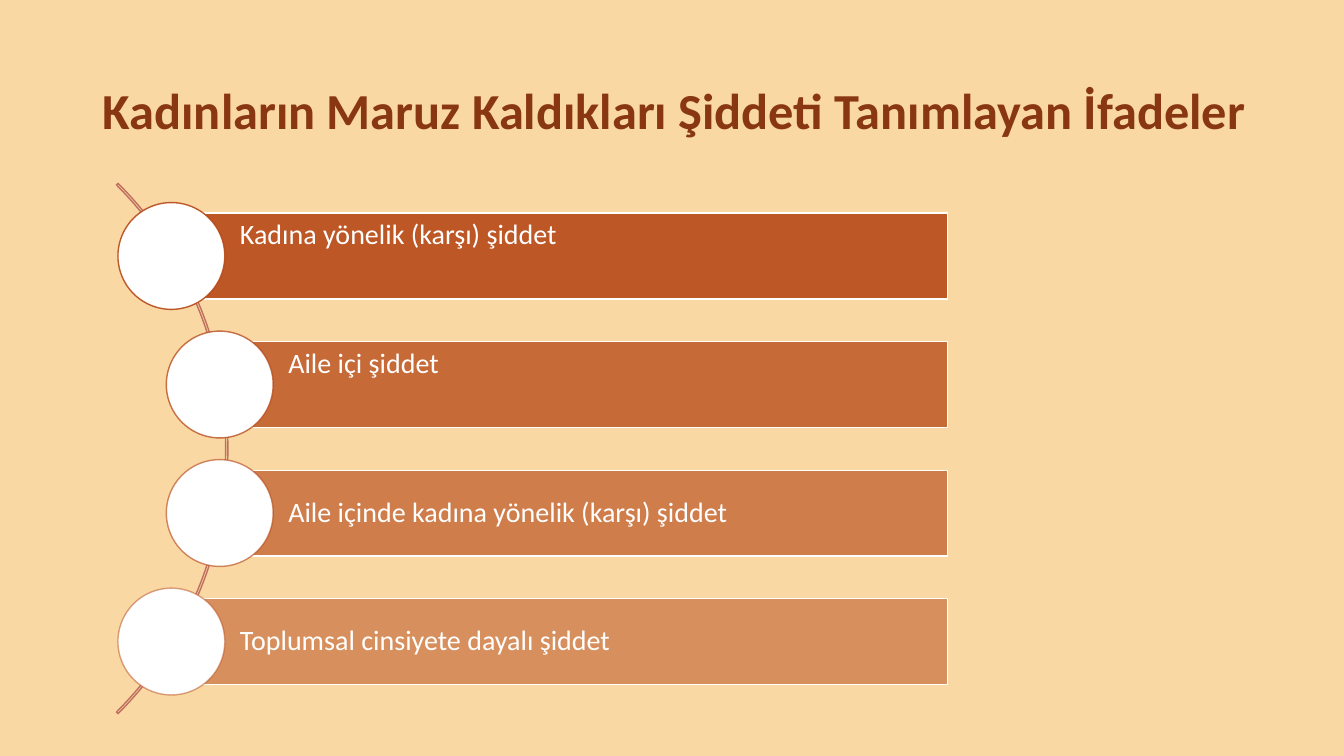
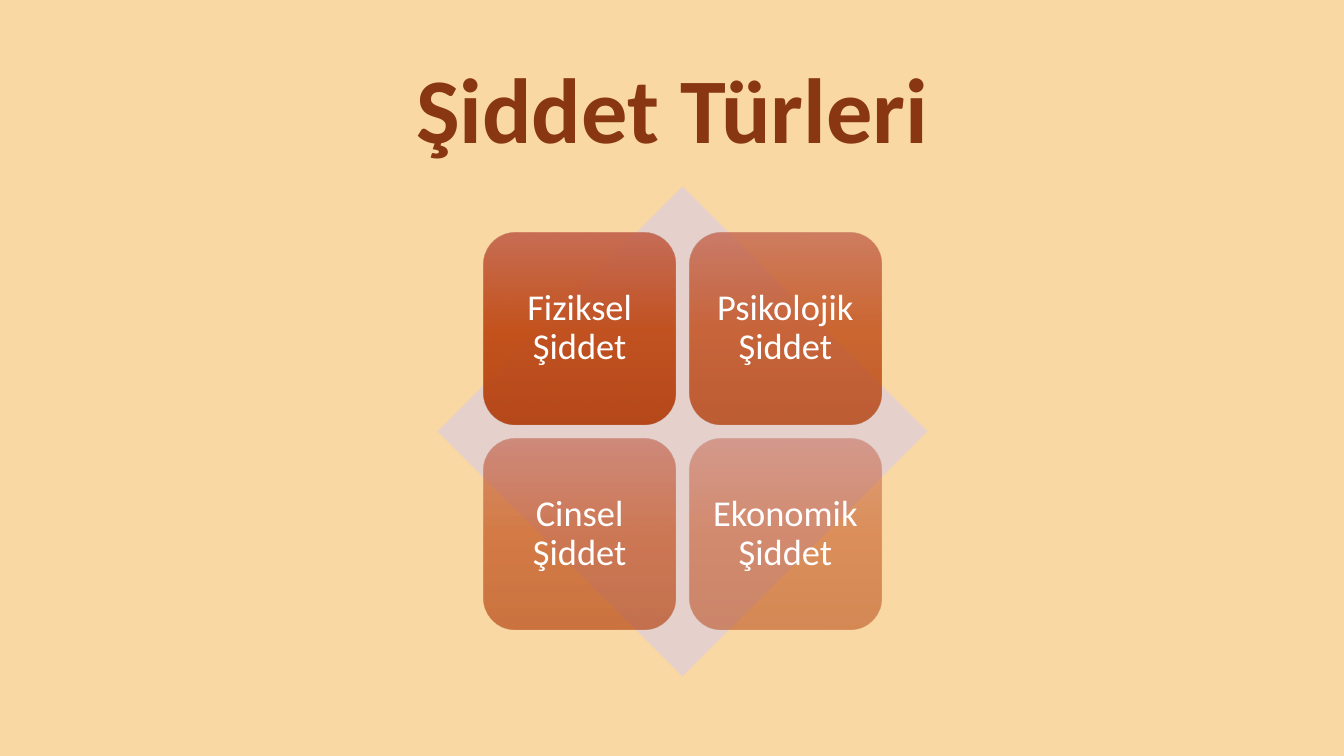
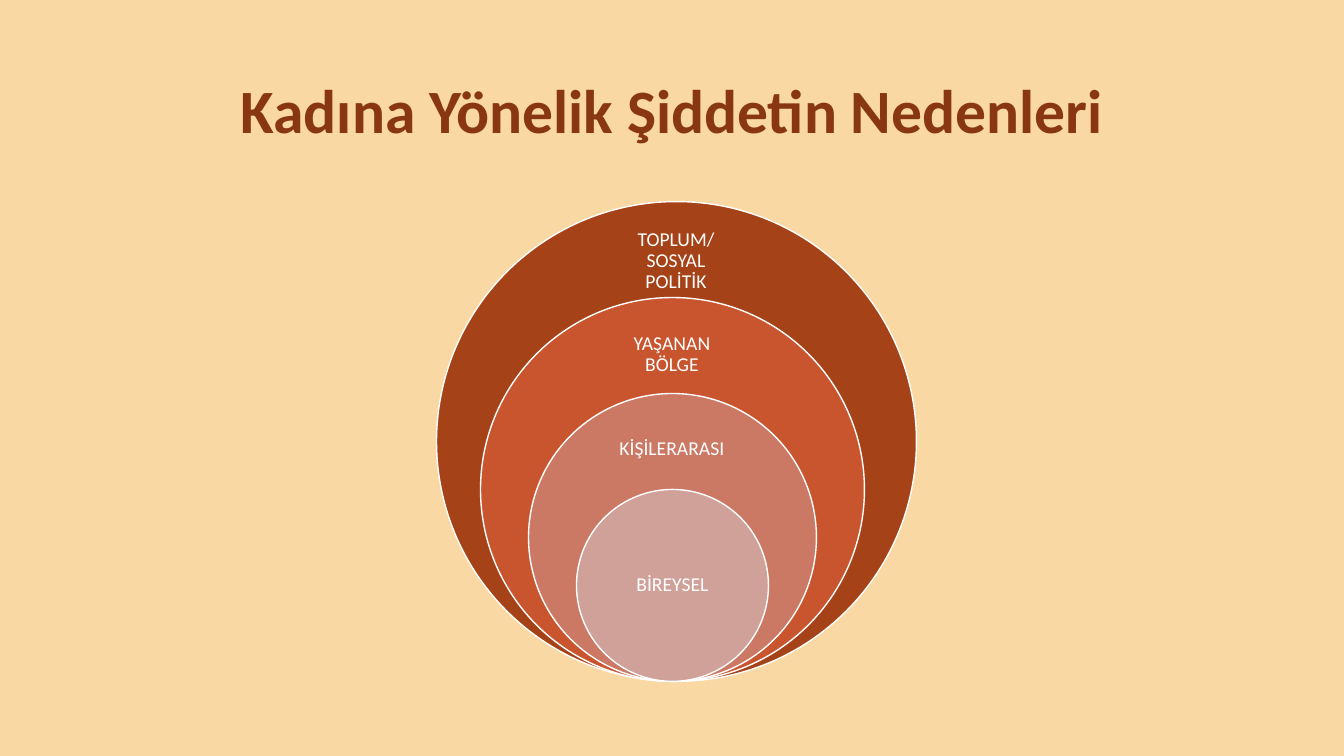
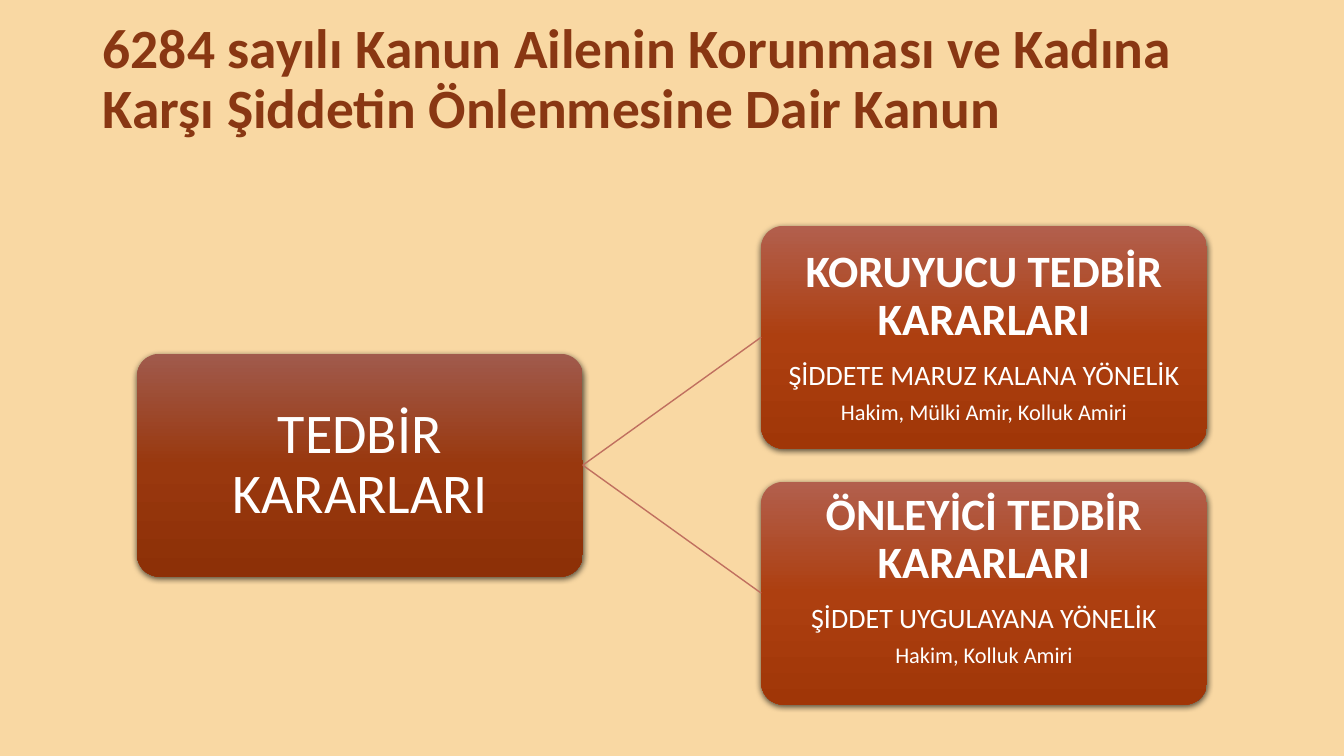
from lxml.etree import SubElement
from pptx import Presentation
from pptx.dml.color import RGBColor
from pptx.enum.shapes import MSO_CONNECTOR as Link, MSO_SHAPE as Kind
from pptx.enum.text import MSO_ANCHOR as Anchor, MSO_AUTO_SIZE as Auto, PP_ALIGN as Align
from pptx.oxml.ns import qn
from pptx.util import Inches, Pt

FONT = "Calibri"
SAND, RUST, WHITE = "F9D8A3", "893713", "FFFFFF"
BRICK, ROSE, MIST = "B74919", "C0705F", "E6D0CC"
TILE = ("C2634D", "BF4611", "B13B08")
ROOT = ("A05A4C", "99380E", "8D3007")
LEAF = ("B25F4D", "AD3F10", "A03607")
RINGS = ("A64217", "C8552D", "CB7964", "D0A198")
ALPHAS = (90, 77, 63, 50)


def rgb(code):
    return RGBColor.from_string(code)


def fade(node, alpha):
    if alpha < 100:
        SubElement(node, qn("a:alpha"), val=str(alpha * 1000))


def blend(shape, codes, alpha):
    shape.fill.gradient()
    shape.fill.gradient_angle = 270
    stops = shape.element.spPr.find(".//" + qn("a:gsLst"))
    for stop in list(stops):
        stops.remove(stop)
    for i, code in enumerate(codes):
        stop = SubElement(stops, qn("a:gs"), pos=str(i * 50000))
        fade(SubElement(stop, qn("a:srgbClr"), val=code), alpha)


def draw(slide, kind, box, fill=None, alpha=100, line=None, edge=100):
    shape = slide.shapes.add_shape(kind, *map(Inches, box))
    shape.shadow.inherit = False
    if fill is None:
        shape.fill.background()
    elif isinstance(fill, tuple):
        blend(shape, fill, alpha)
    else:
        shape.fill.solid()
        shape.fill.fore_color.rgb = rgb(fill)
        fade(shape.element.spPr.find(".//" + qn("a:srgbClr")), alpha)
    if line:
        shape.line.color.rgb = rgb(line)
        shape.line.width = Pt(1)
        fade(shape.element.spPr.find(qn("a:ln")).find(".//" + qn("a:srgbClr")), edge)
    else:
        shape.line.fill.background()
    return shape


def write(shape, *lines, size=20, color=WHITE, bold=False, align=Align.CENTER,
          inset=(0.1, 0.05, 0.1, 0.05), after=0.35):
    frame = shape.text_frame
    frame.word_wrap = True
    frame.auto_size = Auto.NONE
    frame.vertical_anchor = Anchor.MIDDLE
    (frame.margin_left, frame.margin_top,
     frame.margin_right, frame.margin_bottom) = map(Inches, inset)
    for i, line in enumerate(lines):
        words, pts, heavy = line if isinstance(line, tuple) else (line, size, bold)
        para = frame.add_paragraph() if i else frame.paragraphs[0]
        para.alignment = align
        para.line_spacing = 0.9
        para.space_before = Pt(0)
        para.space_after = Pt(round(pts * after, 1))
        run = para.add_run()
        run.text = words
        font = run.font
        font.name, font.size, font.bold = FONT, Pt(pts), heavy
        font.color.rgb = rgb(color)


def start(deck, title, size, align=Align.CENTER, top=0.4, width=11.5):
    slide = deck.slides.add_slide(deck.slide_layouts[5])
    head = slide.shapes.title
    head.left, head.top, head.width, head.height = map(Inches, (0.92, top, width, 1.45))
    write(head, title, size=size, color=RUST, bold=True, align=align, after=0)
    return slide


def arc_list(slide, left, top, items):
    arc = draw(slide, Kind.BLOCK_ARC, (left - 6.35, top - 1.28, 7.44, 7.44), line=ROSE)
    for i, val in enumerate((189, 27, 0.003)):
        arc.adjustments[i] = val
    ball, high, step = 1.06, 0.85, 1.275
    for i, ((words, lift), alpha) in enumerate(zip(items, ALPHAS)):
        x = left + (0.48 if i in (1, 2) else 0)
        y = top + i * step
        mid = x + ball / 2
        bar = draw(slide, Kind.RECTANGLE, (mid, y + (ball - high) / 2, left + 8.23 - mid, high),
                   BRICK, alpha, WHITE)
        write(bar, words, align=Align.LEFT, inset=(0.68, 0.06, 0.06, 0.06 + lift))
        draw(slide, Kind.OVAL, (x, y, ball, ball), WHITE, line=BRICK, edge=alpha)


def tiles(slide, left, top, side, items):
    draw(slide, Kind.DIAMOND, (left, top, side, side), MIST)
    tile, step = 1.9, 2.04
    pad = (side - tile - step) / 2
    for i, (words, alpha) in enumerate(zip(items, ALPHAS)):
        row, col = divmod(i, 2)
        box = (left + pad + col * step, top + pad + row * step, tile, tile)
        write(draw(slide, Kind.ROUNDED_RECTANGLE, box, TILE, alpha), words,
              size=26, inset=(0.11,) * 4)


def rings(slide, mid, top, side, items):
    step = side / 5
    for i, (words, fill) in enumerate(zip(items, RINGS)):
        size = side - i * step
        x = mid + (0 if i else 0.04)
        y = top + i * step
        spot = draw(slide, Kind.OVAL, (x - size / 2, y, size, size), fill, line=WHITE)
        if i < len(items) - 1:
            box = (x - 0.67, y + 0.23, 1.33, 0.72 - i * 0.04)
            spot = slide.shapes.add_textbox(*map(Inches, box))
        write(spot, words, size=14, inset=(0.11,) * 4)


def card(slide, left, top, fill, *lines, lift=0, **style):
    shape = draw(slide, Kind.ROUNDED_RECTANGLE, (left, top, 4.42, 2.21), fill)
    shape.adjustments[0] = 0.1
    glow = SubElement(shape.element.spPr.find(qn("a:effectLst")), qn("a:outerShdw"),
                      blurRad=str(Pt(4.5)), dist=str(Pt(1.5)), dir="5400000", rotWithShape="0")
    fade(SubElement(glow, qn("a:srgbClr"), val="000000"), 63)
    write(shape, *lines, inset=(0.09, 0.05, 0.09, 0.05 + lift), **style)
    return shape


def tree(slide, left, top, root, leaves):
    step = 2.54
    base = card(slide, left, top + step / 2, ROOT, root, size=40)
    for i, (lines, lift) in enumerate(leaves):
        leaf = card(slide, left + 6.19, top + i * step, LEAF, *lines, lift=lift)
        link = slide.shapes.add_connector(Link.STRAIGHT, 0, 0, 0, 0)
        link.begin_connect(base, 3)
        link.end_connect(leaf, 1)
        link.line.color.rgb = rgb(ROSE)
        link.line.width = Pt(1)
        SubElement(link.element.spPr, qn("a:effectLst"))


def main():
    deck = Presentation()
    deck.slide_width, deck.slide_height = Inches(13.33), Inches(7.5)
    back = deck.slide_master.background.fill
    back.solid()
    back.fore_color.rgb = rgb(SAND)

    slide = start(deck, "Kadınların Maruz Kaldıkları Şiddeti Tanımlayan İfadeler", 36,
                  Align.LEFT, width=12.01)
    arc_list(slide, 1.17, 2.01, (
        ("Kadına yönelik (karşı) şiddet", 0.4),
        ("Aile içi şiddet", 0.4),
        ("Aile içinde kadına yönelik (karşı) şiddet", 0),
        ("Toplumsal cinsiyete dayalı şiddet", 0)))

    slide = start(deck, "Şiddet Türleri", 66)
    tiles(slide, 4.34, 1.85, 4.86, (
        "Fiziksel Şiddet", "Psikolojik Şiddet", "Cinsel Şiddet", "Ekonomik Şiddet"))

    slide = start(deck, "Kadına Yönelik Şiddetin Nedenleri", 44)
    rings(slide, 6.67, 2, 4.76, (
        "TOPLUM/SOSYAL POLİTİK", "YAŞANAN BÖLGE", "KİŞİLERARASI", "BİREYSEL"))

    slide = start(deck, "6284 sayılı Kanun Ailenin Korunması ve Kadına "
                  "Karşı Şiddetin Önlenmesine Dair Kanun", 39.6, Align.LEFT, top=0.07)
    tree(slide, 1.36, 2.24, "TEDBİR KARARLARI", (
        ((("KORUYUCU TEDBİR KARARLARI", 32, True),
          ("ŞİDDETE MARUZ KALANA YÖNELİK", 20, False),
          ("Hakim, Mülki Amir, Kolluk Amiri", 16, False)), 0),
        ((("ÖNLEYİCİ TEDBİR KARARLARI", 32, True),
          ("ŞİDDET UYGULAYANA YÖNELİK", 20, False),
          ("Hakim, Kolluk Amiri", 16, False)), 0.26)))

    deck.save("out.pptx")


if __name__ == "__main__":
    main()
